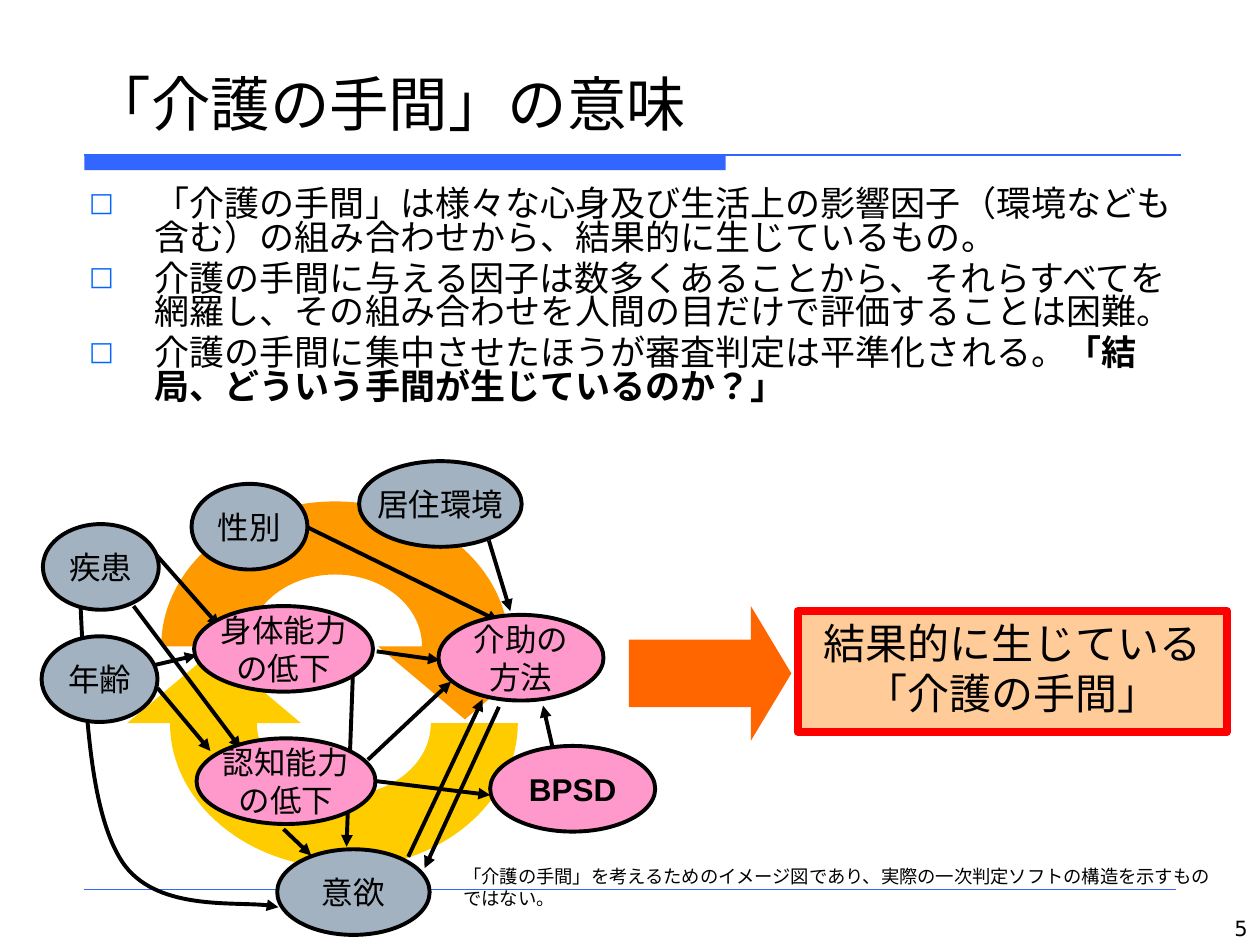
"""Build the slide on what the burden of care means."""
from lxml.etree import SubElement
from pptx import Presentation
from pptx.dml.color import RGBColor
from pptx.enum.lang import MSO_LANGUAGE_ID
from pptx.enum.shapes import MSO_CONNECTOR, MSO_SHAPE
from pptx.enum.text import MSO_ANCHOR, PP_ALIGN
from pptx.oxml.ns import qn
from pptx.util import Inches, Pt

BLACK = RGBColor(0x00, 0x00, 0x00)
BLUE = RGBColor(0x33, 0x66, 0xFF)
BULLET_BLUE = RGBColor(0x00, 0x66, 0xFF)
ORANGE = RGBColor(0xFF, 0x99, 0x00)
YELLOW = RGBColor(0xFF, 0xCC, 0x00)
ARROW_ORANGE = RGBColor(0xFF, 0x66, 0x00)
GREY = RGBColor(0xA3, 0xB2, 0xC1)
PINK = RGBColor(0xFF, 0x99, 0xCC)
PEACH = RGBColor(0xFF, 0xCC, 0x99)
RED = RGBColor(0xFF, 0x00, 0x00)
BODY_FONT, DIAGRAM_FONT = "DejaVu Sans", "Arial"

TITLE = "「介護の手間」の意味"
BULLETS = [
    [("「介護の手間」は様々な心身及び生活上の影響因子（環境なども含む）の組み合わせから、結果的に生じているもの。", False)],
    [("介護の手間に与える因子は数多くあることから、それらすべてを網羅し、その組み合わせを人間の目だけで評価することは困難。", False)],
    [("介護の手間に集中させたほうが審査判定は平準化される。", False),
     ("「結局、どういう手間が生じているのか？」", True)],
]
RESULT = "結果的に生じている\n「介護の手間」"
NOTE = "「介護の手間」を考えるためのイメージ図であり、実際の一次判定ソフトの構造を示すものではない。"
PAGE_NUMBER = "5"

FACTOR_HEIGHT = 0.68
FACTORS = [
    ("居住環境", 2.85, 3.66, 1.29, GREY, False),
    ("意欲", 2.2, 6.74, 1.21, GREY, False),
    ("性別", 1.52, 3.84, 0.92, GREY, False),
    ("疾患", 0.34, 4.16, 0.92, GREY, False),
    ("年齢", 0.33, 5.05, 0.92, GREY, False),
    ("介助の\n方法", 3.48, 4.88, 1.31, PINK, False),
    ("身体能力\nの低下", 1.54, 4.81, 1.42, PINK, False),
    ("認知能力\nの低下", 1.56, 5.86, 1.42, PINK, False),
    ("BPSD", 3.89, 5.92, 1.31, PINK, True),
]
INFLUENCES = [
    (1.22, 5.28, 1.56, 5.2), (1.25, 5.46, 1.67, 5.96), (2.25, 6.58, 2.47, 6.79),
    (2.43, 4.18, 3.96, 4.93), (2.92, 6.03, 3.58, 5.41), (3.24, 6.8, 3.83, 5.55),
    (2.8, 5.37, 2.75, 6.72), (3.88, 4.29, 4.05, 4.85), (2.99, 6.2, 3.89, 6.31),
    (4.39, 5.95, 4.31, 5.6), (3.96, 5.61, 3.37, 6.89), (1.22, 4.38, 1.74, 4.97),
    (1.06, 4.81, 1.91, 5.94), (2.99, 5.17, 3.49, 5.24),
]
ILLNESS_TO_WILL = [
    [(0.64, 4.82)],
    [(0.68, 5.63), (0.71, 6.44), (0.97, 6.84)],
    [(1.23, 7.23), (2, 7.14), (2.21, 7.2)],
]
CYCLE_ARROWS = [(2.66, 5.13, 1, ORANGE), (2.73, 5.74, -1, YELLOW)]
CYCLE_OUTLINE = [
    [(0.69, 0)],
    [(0.69, -0.32), (0.38, -0.57), (0, -0.57)],
    [(-0.38, -0.57), (-0.69, -0.32), (-0.69, 0)],
    [(-1.38, 0)],
    [(-1.38, -0.63), (-0.76, -1.15), (0, -1.15)],
    [(0.76, -1.15), (1.38, -0.63), (1.38, 0)],
    [(1.72, 0)], [(1.03, 0.58)], [(0.34, 0)],
]


def write(frame, paragraphs, size, font, align=PP_ALIGN.LEFT, **layout):
    for name, value in {"word_wrap": True, **layout}.items():
        setattr(frame, name, value)
    for index, runs in enumerate(paragraphs):
        paragraph = frame.paragraphs[0] if index == 0 else frame.add_paragraph()
        paragraph.alignment = align
        for text, bold in runs:
            for row, line in enumerate(text.split("\n")):
                if row:
                    paragraph.add_line_break()
                run = paragraph.add_run()
                run.text = line
                values = {"size": Pt(size), "name": font, "bold": bold,
                          "language_id": MSO_LANGUAGE_ID.JAPANESE}
                for name, value in values.items():
                    setattr(run.font, name, value)
                run.font.color.rgb = BLACK


def add_text(slide, box, paragraphs, size, **layout):
    frame = slide.shapes.add_textbox(*map(Inches, box)).text_frame
    write(frame, paragraphs, size, BODY_FONT, **layout)
    return frame


def paint(shape, fill=None, line=None, width=2.25):
    shape.shadow.inherit = False
    if fill is None:
        shape.fill.background()
    else:
        shape.fill.solid()
        shape.fill.fore_color.rgb = fill
    if line is None:
        shape.line.fill.background()
    else:
        shape.line.color.rgb = line
        shape.line.width = Pt(width)


def add_shape(slide, kind, box, fill, line=None, width=2.25):
    shape = slide.shapes.add_shape(kind, *map(Inches, box))
    paint(shape, fill, line, width)
    return shape


def add_outline(slide, steps, closed):
    """Draw steps of one point as straight lines and of three points as curves."""
    steps = [[(Inches(x), Inches(y)) for x, y in step] for step in steps]
    builder = slide.shapes.build_freeform(*steps[0][0], scale=1.0)
    builder.add_line_segments([step[-1] for step in steps[1:]], close=closed)
    shape = builder.convert_to_shape()
    segments = list(shape._element.iter(qn("a:lnTo")))
    for segment, step in zip(segments, steps[1:]):
        if len(step) == 3:
            curve = SubElement(segment.getparent(), qn("a:cubicBezTo"))
            for x, y in step:
                SubElement(curve, qn("a:pt"), x=str(x - shape.left), y=str(y - shape.top))
            segment.getparent().replace(segment, curve)
    return shape


def add_arrowhead(shape):
    SubElement(shape.line._get_or_add_ln(), qn("a:tailEnd"), type="triangle")


def add_line(slide, ends, color, width, arrow=False):
    connector = slide.shapes.add_connector(MSO_CONNECTOR.STRAIGHT, *map(Inches, ends))
    connector.line.color.rgb = color
    connector.line.width = Pt(width)
    if arrow:
        add_arrowhead(connector)
    SubElement(connector._element.spPr, qn("a:effectLst"))


def add_bullets(slide):
    frame = add_text(slide, (0.61, 1.46, 9, 2.53), BULLETS, 20)
    for paragraph in frame.paragraphs:
        paragraph.line_spacing = 0.8
        paragraph.space_before = Pt(4)
        properties = paragraph._p.get_or_add_pPr()
        values = {"marL": Inches(0.52), "indent": Inches(-0.52), "hangingPunct": 0}
        for name, value in values.items():
            properties.set(name, str(value))
        color = SubElement(properties, qn("a:buClr"))
        SubElement(color, qn("a:srgbClr"), val=str(BULLET_BLUE))
        SubElement(properties, qn("a:buSzPct"), val="75000")
        SubElement(properties, qn("a:buFont"), typeface=BODY_FONT)
        SubElement(properties, qn("a:buChar"), char="□")


def add_diagram(slide):
    for x, y, turn, color in CYCLE_ARROWS:
        steps = [[(x + turn * dx, y + turn * dy) for dx, dy in step] for step in CYCLE_OUTLINE]
        paint(add_outline(slide, steps, True), color)
    for ends in INFLUENCES:
        add_line(slide, ends, BLACK, 2.25, arrow=True)
    curve = add_outline(slide, ILLNESS_TO_WILL, False)
    paint(curve, line=BLACK)
    add_arrowhead(curve)
    for text, left, top, width, fill, bold in FACTORS:
        ellipse = add_shape(slide, MSO_SHAPE.OVAL, (left, top, width, FACTOR_HEIGHT), fill, BLACK)
        write(ellipse.text_frame, [[(text, bold)]], 18, DIAGRAM_FONT, PP_ALIGN.CENTER,
              word_wrap=False, vertical_anchor=MSO_ANCHOR.MIDDLE)


def add_result(slide):
    arrow = add_shape(slide, MSO_SHAPE.RIGHT_ARROW, (4.99, 4.81, 1.29, 1.07), ARROW_ORANGE)
    arrow.adjustments[0], arrow.adjustments[1] = 0.5, 0.3
    box = add_shape(slide, MSO_SHAPE.RECTANGLE, (6.33, 4.85, 3.41, 0.96), PEACH, RED, 4.5)
    write(box.text_frame, [[(RESULT, False)]], 24, DIAGRAM_FONT, PP_ALIGN.CENTER,
          vertical_anchor=MSO_ANCHOR.TOP)


def main():
    presentation = Presentation()
    presentation.slide_width, presentation.slide_height = Inches(10), Inches(7.5)
    slide = presentation.slides.add_slide(presentation.slide_layouts[6])
    add_shape(slide, MSO_SHAPE.RECTANGLE, (0.67, 1.23, 5.09, 0.12), BLUE)
    add_line(slide, (0.67, 1.23, 9.37, 1.23), BLUE, 0.75)
    add_line(slide, (0.67, 7.06, 9.33, 7.06), BLUE, 0.25)
    add_text(slide, (0.63, 0.33, 8.75, 0.82), [[(TITLE, False)]], 34,
             vertical_anchor=MSO_ANCHOR.BOTTOM)
    add_bullets(slide)
    add_diagram(slide)
    add_result(slide)
    add_text(slide, (7.91, 7.22, 2.09, 0.28), [[(PAGE_NUMBER, False)]], 12, align=PP_ALIGN.RIGHT)
    add_text(slide, (3.58, 6.82, 6.22, 0.28), [[(NOTE, False)]], 10.5)
    presentation.save("out.pptx")


if __name__ == "__main__":
    main()
